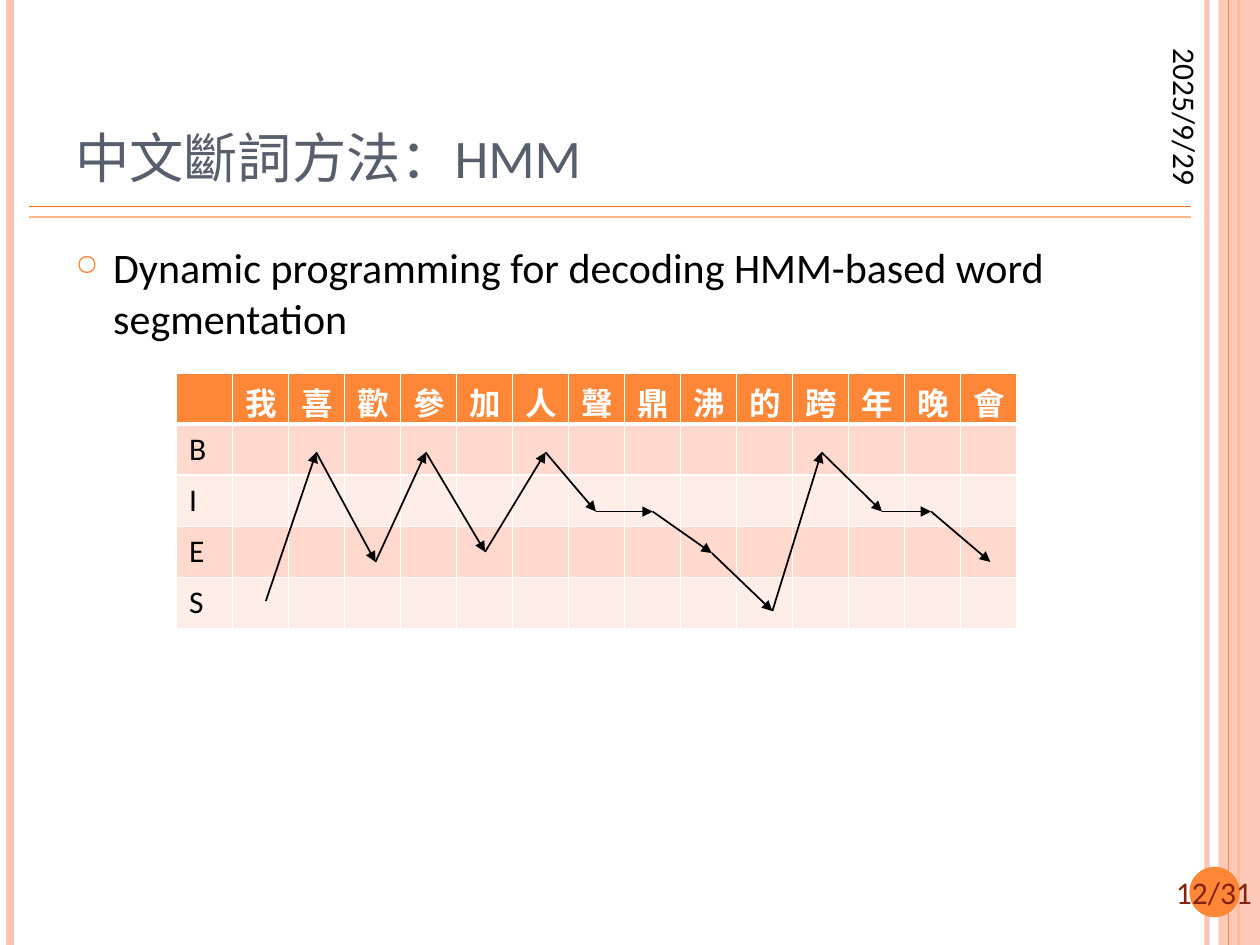
import itertools
from dataclasses import dataclass

import pptx
import pptx.dml.color
import pptx.enum.shapes
import pptx.enum.text
import pptx.oxml
import pptx.oxml.ns
import pptx.oxml.xmlchemy
import pptx.util
from pptx.util import Inches

qn = pptx.oxml.ns.qn


@dataclass(frozen=True)
class Theme:
    font: str = "Calibri"
    title_size: int = 31
    body_size: int = 24
    small_size: int = 18
    black: str = "000000"
    white: str = "FFFFFF"
    slate: str = "575F6D"
    brown: str = "862110"
    orange: str = "FE8637"
    deep_orange: str = "FF6B0A"
    pale_orange: str = "FEB687"
    peach: str = "FEC3AE"
    bands: tuple = ("FFD9CE", "FFEDE8")


def rgb(value):
    return pptx.dml.color.RGBColor.from_string(value)


def add_child(parent, tag, **attributes):
    child = parent.makeelement(qn(tag), attributes)
    parent.append(child)
    return child


def set_alpha(properties, percent):
    """Make every colour below the given element partly transparent."""
    for colour in properties.iter(qn("a:srgbClr")):
        add_child(colour, "a:alpha", val=str(percent * 1000))


class SlideBuilder:
    def __init__(self, page, theme):
        self.page = page
        self.theme = theme

    def format_para(self, para, size, colour, bold=False):
        for span in para.runs:
            span.font.name = self.theme.font
            span.font.size = pptx.util.Pt(size)
            span.font.bold = bold
            span.font.color.rgb = rgb(colour)

    def line(self, start, end, colour, width, alpha=None, arrow=False):
        line = self.page.shapes.add_connector(
            pptx.enum.shapes.MSO_CONNECTOR.STRAIGHT,
            *(Inches(value) for value in start + end))
        line.line.color.rgb = rgb(colour)
        line.line.width = pptx.util.Pt(width)
        properties = line._element.spPr
        if alpha:
            set_alpha(properties, alpha)
        if arrow:
            add_child(properties.find(qn("a:ln")), "a:tailEnd", type="triangle")
        add_child(properties, "a:effectLst")

    def shape(self, kind, area, colour, alpha=None):
        shape = self.page.shapes.add_shape(kind, *(Inches(value) for value in area))
        shape.shadow.inherit = False
        shape.fill.solid()
        shape.fill.fore_color.rgb = rgb(colour)
        shape.line.fill.background()
        if alpha:
            set_alpha(shape._element.spPr, alpha)

    def text(self, words, area, size, colour,
             anchor=pptx.enum.text.MSO_ANCHOR.TOP, align=None, rotation=0):
        box = self.page.shapes.add_textbox(*(Inches(value) for value in area))
        box.rotation = rotation
        frame = box.text_frame
        frame.word_wrap = True
        frame.vertical_anchor = anchor
        frame.text = words
        para = frame.paragraphs[0]
        para.alignment = align
        self.format_para(para, size, colour)
        return para

    def bullet_text(self, words, area):
        para = self.text(words, area, self.theme.body_size, self.theme.black)
        para.space_before = pptx.util.Pt(6)
        properties = para._p.get_or_add_pPr()
        properties.set("marL", str(Inches(0.3)))
        properties.set("indent", str(-Inches(0.3)))
        colour = add_child(properties, "a:buClr")
        add_child(colour, "a:srgbClr", val=self.theme.orange)
        add_child(properties, "a:buSzPct", val="70000")
        add_child(properties, "a:buChar", char="○")

    def cell_borders(self, cell, bottom_width):
        """White borders; they must come before the fill in the cell XML."""
        properties = cell._tc.get_or_add_tcPr()
        for side, width in (("L", 1), ("R", 1), ("T", 1), ("B", bottom_width)):
            border = add_child(properties, f"a:ln{side}", w=str(pptx.util.Pt(width)))
            fill = add_child(border, "a:solidFill")
            add_child(fill, "a:srgbClr", val=self.theme.white)

    def tag_table(self, characters, tags, area):
        theme = self.theme
        rows, columns = len(tags) + 1, len(characters) + 1
        table = self.page.shapes.add_table(
            rows, columns, *(Inches(value) for value in area)).table
        for column in table.columns:
            column.width = int(Inches(area[2]) / columns)
        for row, column in itertools.product(range(rows), range(columns)):
            cell = table.cell(row, column)
            header = row == 0
            self.cell_borders(cell, 3 if header else 1)
            cell.fill.solid()
            cell.fill.fore_color.rgb = rgb(
                theme.orange if header else theme.bands[(row - 1) % 2])
            if header and column:
                cell.text_frame.text = characters[column - 1]
            elif column == 0 and row:
                cell.text_frame.text = tags[row - 1]
            para = cell.text_frame.paragraphs[0]
            para.font.size = pptx.util.Pt(theme.small_size)
            self.format_para(para, theme.small_size,
                             theme.white if header else theme.black, header)

    def arrow_chain(self, points):
        for start, end in itertools.pairwise(points):
            self.line(start, end, self.theme.black, 1, arrow=True)


def add_frame(builder):
    """Side stripes, title rules and the page number disc."""
    theme = builder.theme
    shapes = pptx.enum.shapes.MSO_SHAPE

    def stripe(x, colour, width, alpha=None):
        builder.line((x, 0), (x, 7.5), colour, width, alpha)

    stripe(9.58, theme.peach, 3, 93)
    stripe(0.08, theme.peach, 4.5)
    stripe(9.83, theme.orange, 1.5)
    builder.shape(shapes.RECTANGLE, (9.67, 0, 0.33, 7.5), theme.peach, 87)
    stripe(9.75, theme.orange, 0.75)
    for y, colour in ((1.64, theme.deep_orange), (1.72, theme.pale_orange)):
        builder.line((0.23, y), (9.45, y), colour, 1)
    builder.shape(shapes.OVAL, (9.44, 6.88, 0.4, 0.4), theme.orange)
    builder.text("12/31", (9.18, 6.88, 0.91, 0.4), theme.small_size, theme.brown,
                 align=pptx.enum.text.PP_ALIGN.CENTER)


def main():
    deck = pptx.Presentation()
    deck.slide_width, deck.slide_height = Inches(10), Inches(7.5)
    theme = Theme()
    builder = SlideBuilder(deck.slides.add_slide(deck.slide_layouts[6]), theme)

    add_frame(builder)
    builder.bullet_text("Dynamic programming for decoding HMM-based word segmentation",
                        (0.5, 1.87, 8.59, 5.21))
    builder.text("2025/9/29", (8.3, 1.18, 2.2, 0.42), theme.small_size, theme.black,
                 rotation=90)
    builder.text("中文斷詞方法：HMM", (0.5, 0.3, 8.17, 1.25), theme.title_size, theme.slate,
                 anchor=pptx.enum.text.MSO_ANCHOR.BOTTOM)
    builder.tag_table("我喜歡參加人聲鼎沸的跨年晚會", "BIES", (1.4, 2.96, 6.67, 2.03))
    builder.arrow_chain([
        (2.11, 4.77), (2.51, 3.59), (2.98, 4.46), (3.38, 3.59), (3.85, 4.38),
        (4.33, 3.59), (4.73, 4.06), (5.18, 4.06), (5.65, 4.39), (6.13, 4.85),
        (6.52, 3.59), (7, 4.06), (7.39, 4.06), (7.86, 4.46)])

    deck.save("out.pptx")


if __name__ == "__main__":
    main()
